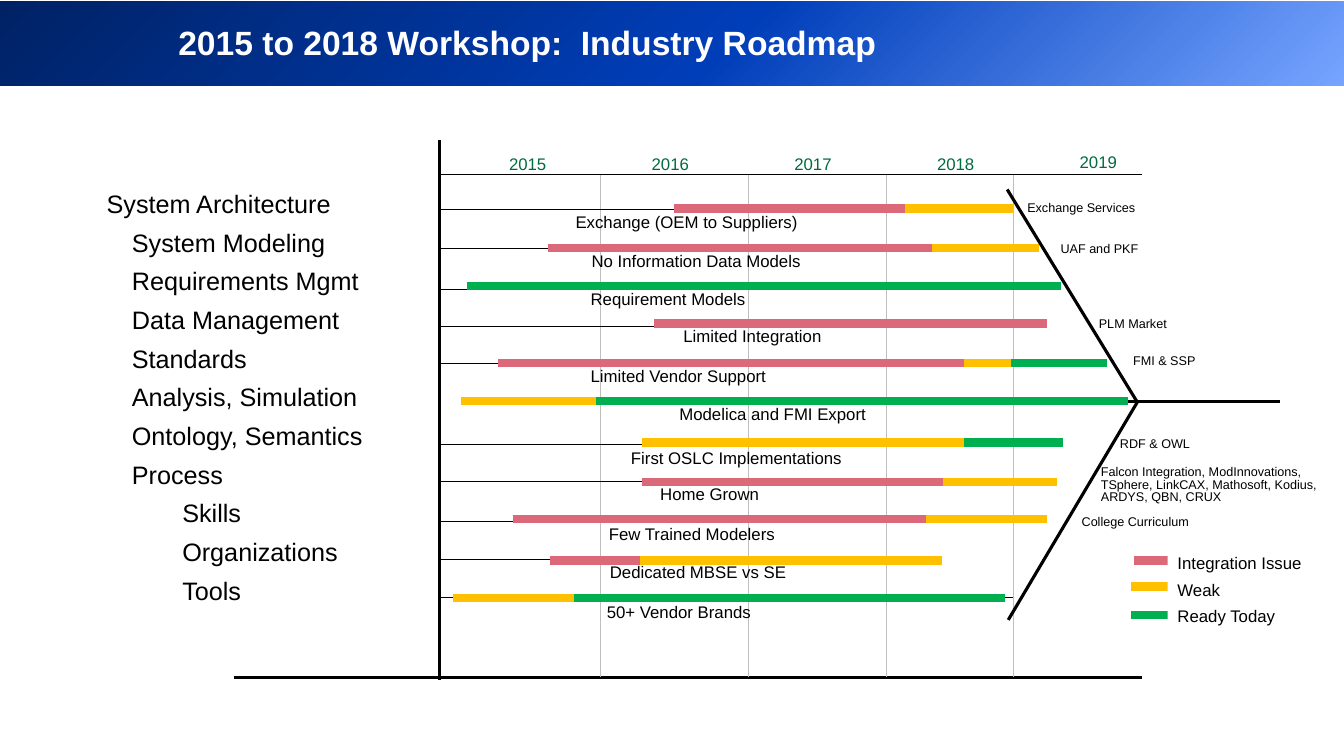
from copy import deepcopy
from dataclasses import dataclass

from pptx import Presentation
from pptx.dml.color import RGBColor
from pptx.enum.shapes import MSO_CONNECTOR, MSO_SHAPE
from pptx.enum.text import MSO_AUTO_SIZE
from pptx.oxml.ns import qn
from pptx.oxml.xmlchemy import OxmlElement
from pptx.util import Inches, Pt

STRAIGHT = MSO_CONNECTOR.STRAIGHT
RECTANGLE = MSO_SHAPE.RECTANGLE
FIT_SHAPE = MSO_AUTO_SIZE.SHAPE_TO_FIT_TEXT

BLACK, WHITE, GRID_GRAY, YEAR_GREEN = "000000", "FFFFFF", "BFBFBF", "006B3F"
ISSUE, WEAK, READY = "DC6979", "FFC000", "00B050"
BANNER_STOPS = [(0, "76A4FF"), (0.46, "003EB9"), (1, "002265")]
THIN, THICK, BAR = 0.75, 2.25, 6
AXIS_X, BASE_Y, HEADER_Y = 4.36, 6.72, 1.73


@dataclass
class Segment:
    status: str
    start: float
    end: float


@dataclass
class Lane:
    """One roadmap row: a thin guide line, status bars and a label."""
    guide_y: float
    guide_end: float
    bar_y: float
    segments: list[Segment]
    label: str
    label_left: float
    label_top: float
    label_width: float = 2.36


@dataclass
class Note:
    text: str
    left: float
    top: float
    width: float
    height: float = 0.25
    line_spacing: float | None = None


LANES = [
    Lane(2.08, 7.76, 2.07, [Segment(ISSUE, 6.68, 8.98), Segment(WEAK, 8.98, 10.05)],
         "Exchange (OEM to Suppliers)", 5.61, 2.05, 2.61),
    Lane(2.47, 7.77, 2.46, [Segment(ISSUE, 5.44, 9.33), Segment(WEAK, 9.24, 10.31)],
         "No Information Data Models", 5.77, 2.44),
    Lane(2.87, 7.78, 2.84, [Segment(READY, 4.63, 10.52)],
         "Requirement Models", 5.76, 2.82),
    Lane(3.24, 7.78, 3.21, [Segment(ISSUE, 6.49, 10.38)],
         "Limited Integration", 6.68, 3.18),
    Lane(3.61, 7.77, 3.6, [Segment(ISSUE, 4.94, 9.65), Segment(WEAK, 9.56, 10.08),
                           Segment(READY, 10.03, 10.98)],
         "Limited Vendor Support", 5.76, 3.58),
    Lane(3.98, AXIS_X, 3.98, [Segment(READY, 5.83, 11.19), Segment(WEAK, 4.57, 5.91)],
         "Modelica and FMI Export", 6.64, 3.96),
    Lane(4.41, 7.76, 4.39, [Segment(WEAK, 6.37, 9.63), Segment(READY, 9.56, 10.54)],
         "First OSLC Implementations", 6.16, 4.39),
    Lane(4.78, 8.31, 4.78, [Segment(ISSUE, 6.37, 9.42), Segment(WEAK, 9.35, 10.48)],
         "Home Grown", 6.45, 4.75, 1.54),
    Lane(5.17, 8.15, 5.15, [Segment(ISSUE, 5.09, 9.2), Segment(WEAK, 9.18, 10.38)],
         "Few Trained Modelers", 5.94, 5.15, 2.3),
    Lane(5.55, 7.93, 5.56, [Segment(WEAK, 6.33, 9.34), Segment(ISSUE, 5.46, 6.35)],
         "Dedicated MBSE vs SE", 5.95, 5.52, 2.68),
    Lane(5.93, 10.05, 5.93, [Segment(READY, 5.68, 9.97), Segment(WEAK, 4.49, 5.69)],
         "50+ Vendor Brands", 5.92, 5.92, 2.3),
]
NOTES = [
    Note("Exchange Services", 10.09, 1.93, 1.28),
    Note("UAF and PKF", 10.42, 2.34, 0.98),
    Note("PLM Market", 10.8, 3.08, 0.88),
    Note("FMI & SSP", 11.14, 3.45, 0.83),
    Note("RDF & OWL", 11.01, 4.27, 0.9),
    Note("Falcon Integration, ModInnovations,\nTSphere, LinkCAX, Mathosoft, Kodius,\n"
         "ARDYS, QBN, CRUX", 10.82, 4.58, 2.41, 0.48, 9),
    Note("College Curriculum", 10.63, 5.05, 1.27),
]
TOPICS = [("System Architecture", 0)]
TOPICS += [(name, 1) for name in (
    "System Modeling", "Requirements Mgmt", "Data Management", "Standards",
    "Analysis, Simulation", "Ontology, Semantics", "Process")]
TOPICS += [(name, 2) for name in ("Skills", "Organizations", "Tools")]
TOPIC_MARGINS = [0, 0.25, 0.75]
LEGEND = [("Integration Issue", ISSUE, 11.25, 5.56), ("Weak", WEAK, 11.22, 5.82),
          ("Ready Today", READY, 11.22, 6.1)]


def color(value: str) -> RGBColor:
    return RGBColor.from_string(value)


def add_line(slide, x1: float, y1: float, x2: float, y2: float,
             line_color: str = BLACK, width: float = THIN) -> None:
    line = slide.shapes.add_connector(
        STRAIGHT, Inches(x1), Inches(y1), Inches(x2), Inches(y2))
    line.line.color.rgb = color(line_color)
    line.line.width = Pt(width)
    line._element.spPr.append(OxmlElement("a:effectLst"))


def add_text(slide, text: str, left: float, top: float, width: float, height: float = 0.3,
             *, size: float = 12, font_color: str = BLACK, bold: bool = False,
             wrap: bool = True, right_inset: float = 0.1, grow: bool = True,
             line_spacing: float | None = None, space_before: float = 0,
             levels: list[int] | None = None, fill: str | None = None) -> None:
    """Blank-line-free text: each level gets a paragraph, otherwise newlines break lines."""
    box = slide.shapes.add_textbox(Inches(left), Inches(top), Inches(width), Inches(height))
    if fill:
        box.fill.solid()
        box.fill.fore_color.rgb = color(fill)
    frame = box.text_frame
    frame.word_wrap = wrap
    frame.margin_right = Inches(right_inset)
    if grow:
        frame.auto_size = FIT_SHAPE
    for index, block in enumerate(text.split("\n") if levels else [text]):
        paragraph = frame.add_paragraph() if index else frame.paragraphs[0]
        if levels and levels[index]:
            paragraph.level = levels[index]
            margin = Inches(TOPIC_MARGINS[levels[index]])
            paragraph._p.get_or_add_pPr().set("marL", str(margin))
        if line_spacing:
            paragraph.line_spacing = Pt(line_spacing)
        if index and space_before:
            paragraph.space_before = Pt(space_before)
        for line_index, line in enumerate(block.split("\n")):
            if line_index:
                paragraph.add_line_break()
            run = paragraph.add_run()
            run.text = line
            run.font.name = "Arial"
            run.font.size = Pt(size)
            run.font.bold = bold
            run.font.color.rgb = color(font_color)


def add_banner(slide) -> None:
    banner = slide.shapes.add_shape(
        RECTANGLE, Inches(0), Inches(0.02), Inches(13.33), Inches(0.83))
    banner.shadow.inherit = False
    banner.line.fill.background()
    banner.fill.gradient()
    banner.fill.gradient_angle = 135
    stop_list = banner._element.spPr.find(qn("a:gradFill")).find(qn("a:gsLst"))
    stop_list.append(deepcopy(stop_list[0]))
    for stop, (position, stop_color) in zip(banner.fill.gradient_stops, BANNER_STOPS):
        stop.position = position
        stop.color.rgb = color(stop_color)
    add_text(slide, "2015 to 2018 Workshop:  Industry Roadmap", 1.67, 0.21, 10, 0.62,
             size=24, font_color=WHITE, bold=True, line_spacing=26, grow=False)


def add_timeline(slide) -> None:
    add_line(slide, 2.32, BASE_Y, 11.33, BASE_Y, width=THICK)
    add_line(slide, AXIS_X, 1.39, AXIS_X, 6.75, width=THICK)
    for x in (5.96, 7.42, 8.79, 10.05):
        add_line(slide, x, HEADER_Y, x, BASE_Y, GRID_GRAY)
    add_line(slide, AXIS_X, HEADER_Y, 11.33, HEADER_Y)
    for index in range(5):
        add_text(slide, str(2015 + index), 4.95 + 1.415 * index, 1.46 if index == 4 else 1.48,
                 0.55, font_color=YEAR_GREEN, right_inset=0)
    add_line(slide, 6.8, 3.98, 12.7, 3.98, width=THICK)
    add_line(slide, 10, 6.15, 11.28, 3.99, width=THICK)
    add_line(slide, 9.99, 1.88, 11.28, 3.99, width=THICK)


def add_lane(slide, lane: Lane) -> None:
    if lane.guide_end > AXIS_X:
        add_line(slide, AXIS_X, lane.guide_y, lane.guide_end, lane.guide_y)
    for segment in lane.segments:
        add_line(slide, segment.start, lane.bar_y, segment.end, lane.bar_y,
                 segment.status, BAR)
    add_text(slide, lane.label, lane.label_left, lane.label_top, lane.label_width)


def main() -> None:
    presentation = Presentation()
    presentation.slide_width, presentation.slide_height = Inches(13.33), Inches(7.5)
    slide = presentation.slides.add_slide(presentation.slide_layouts[6])
    add_banner(slide)
    add_timeline(slide)
    add_text(slide, "\n".join(name for name, _ in TOPICS), 0.96, 1.82, 2.73, 4.27, size=18,
             right_inset=0, space_before=6, levels=[level for _, level in TOPICS])
    for lane in LANES:
        add_lane(slide, lane)
    for note in NOTES:
        add_text(slide, note.text, note.left, note.top, note.width, note.height,
                 size=9, wrap=False, line_spacing=note.line_spacing)
    for _, status, left, y in LEGEND:
        add_line(slide, left, y, 11.58, y, status, BAR)
    add_text(slide, "\n".join(entry[0] for entry in LEGEND), 11.58, 5.37, 1.45, 0.9,
             line_spacing=19, levels=[0] * len(LEGEND), fill=WHITE)
    presentation.save("out.pptx")


if __name__ == "__main__":
    main()
